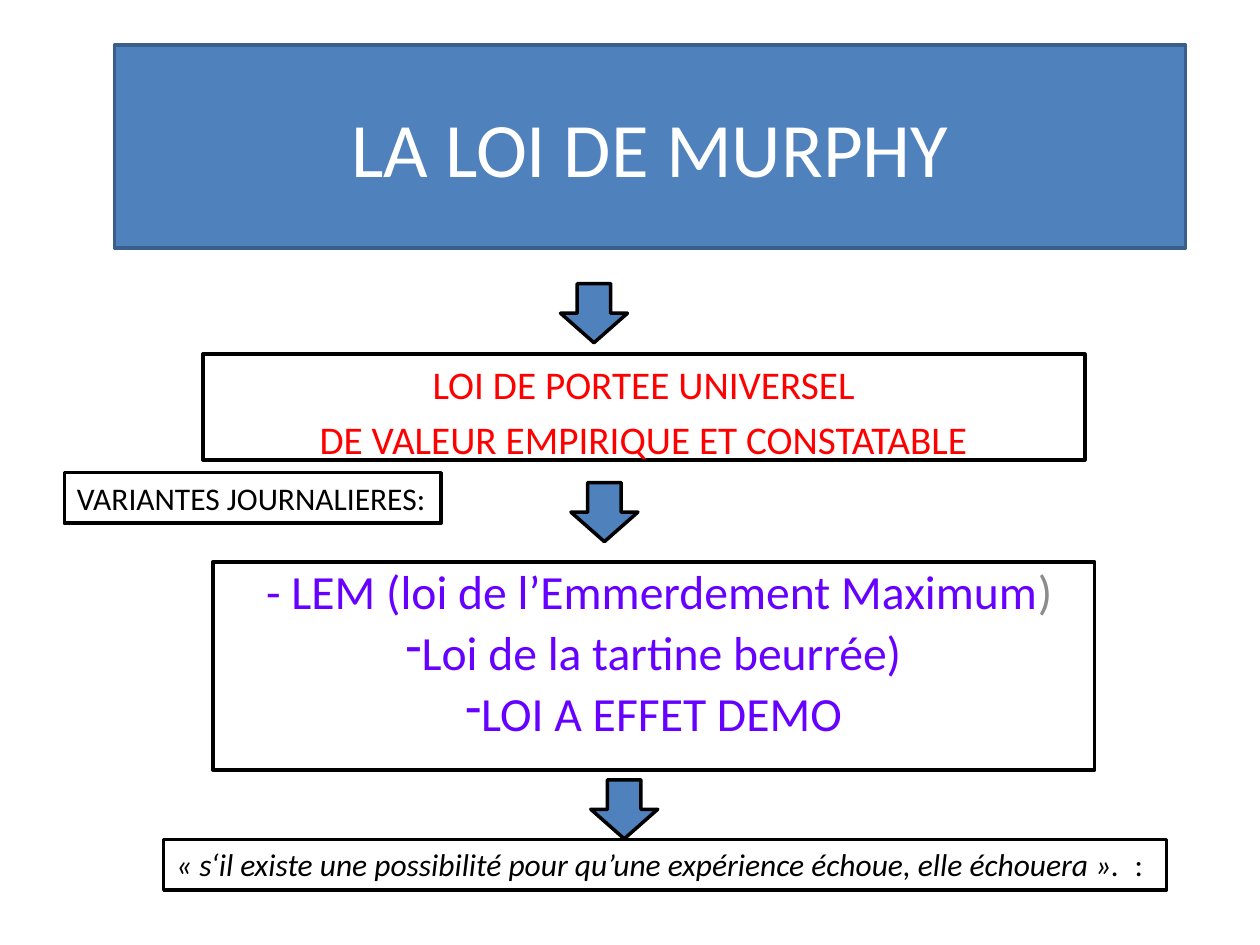
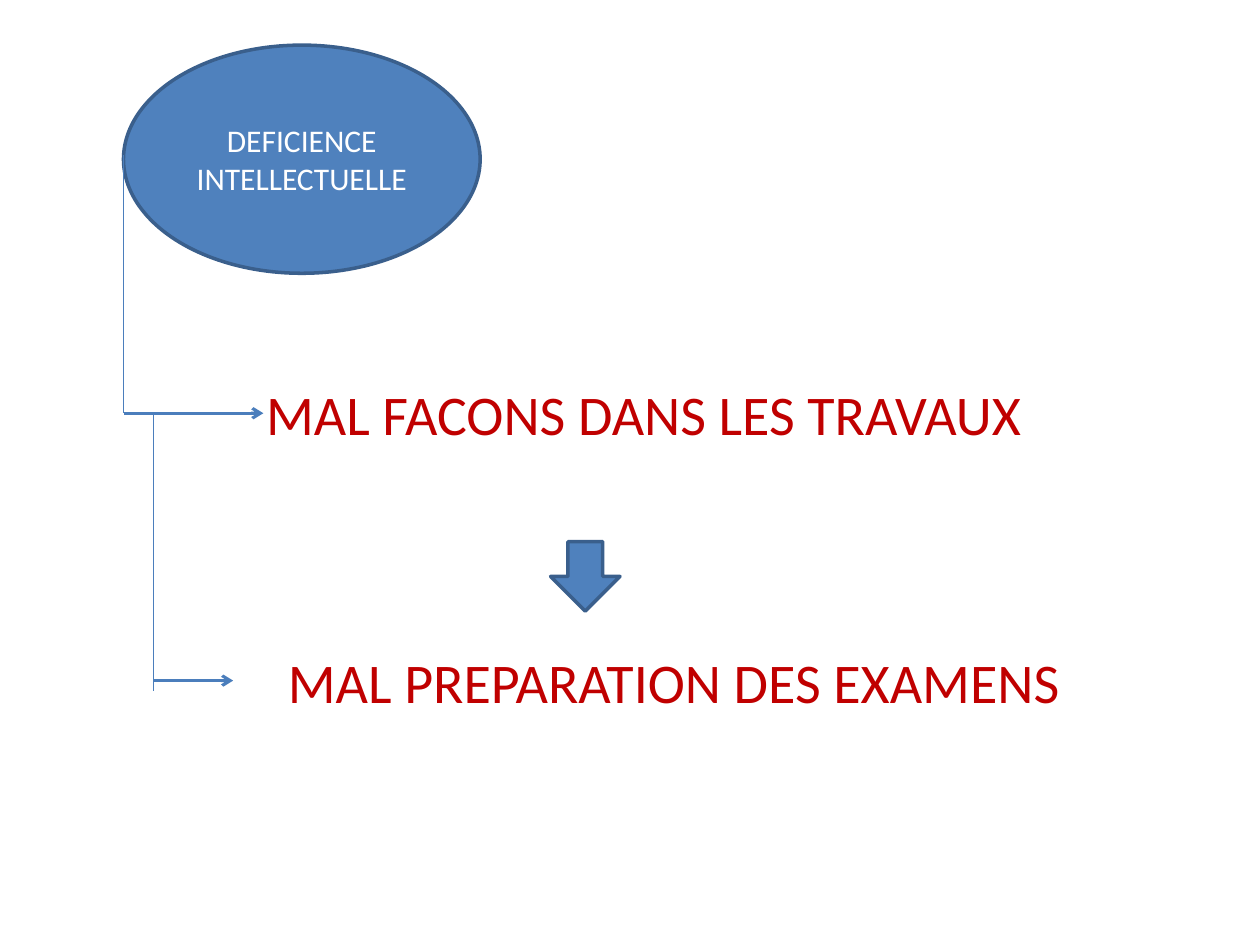
from dataclasses import dataclass

from lxml.etree import SubElement
from pptx import Presentation
from pptx.dml.color import RGBColor as Rgb
from pptx.enum.shapes import MSO_CONNECTOR as Connector, MSO_SHAPE as Preset
from pptx.enum.text import MSO_ANCHOR as Anchor, MSO_AUTO_SIZE as AutoSize, PP_ALIGN as Align
from pptx.oxml.ns import qn
from pptx.util import Cm, Pt


@dataclass(frozen=True)
class Theme:
    font: str = "Calibri"
    blue: Rgb = Rgb(0x4F, 0x81, 0xBD)
    blue_edge: Rgb = Rgb(0x3A, 0x5F, 0x8C)
    blue_link: Rgb = Rgb(0x4B, 0x7E, 0xBC)
    black: Rgb = Rgb(0, 0, 0)
    white: Rgb = Rgb(255, 255, 255)
    red: Rgb = Rgb(255, 0, 0)
    dark_red: Rgb = Rgb(0xC0, 0, 0)
    violet: Rgb = Rgb(0x66, 0, 255)
    grey: Rgb = Rgb(0x8C, 0x8C, 0x8C)
    title_size: float = 44
    law_size: float = 22.4
    variant_size: float = 27.2
    outcome_size: float = 32
    note_size: float = 18
    edge_width: float = 2
    paragraph_gap: float = 0.2


THEME = Theme()


@dataclass(frozen=True)
class Area:
    """A rectangle in centimetres."""
    left: float
    top: float
    width: float
    height: float

    def lengths(self) -> tuple:
        return Cm(self.left), Cm(self.top), Cm(self.width), Cm(self.height)


@dataclass(frozen=True)
class Style:
    size: float
    color: Rgb
    align: Align = Align.CENTER
    anchor: Anchor = Anchor.TOP
    gap: float = 0
    line_spacing: float | None = None


@dataclass(frozen=True)
class Link:
    """A straight line in centimetres."""
    start: tuple[float, float]
    end: tuple[float, float]
    arrow: bool = False


TITLE = Style(THEME.title_size, THEME.white, anchor=Anchor.MIDDLE)
LAW = Style(THEME.law_size, THEME.red, gap=THEME.paragraph_gap)
VARIANT = Style(THEME.variant_size, THEME.violet, gap=THEME.paragraph_gap, line_spacing=0.9)
NOTE = Style(THEME.note_size, THEME.black, align=Align.LEFT)
CAUSE = Style(THEME.note_size, THEME.white, anchor=Anchor.MIDDLE)
OUTCOME = Style(THEME.outcome_size, THEME.dark_red, gap=THEME.paragraph_gap)


def place(shape, area: Area) -> None:
    shape.left, shape.top, shape.width, shape.height = area.lengths()


def paint(shape, fill: Rgb, edge: Rgb) -> None:
    shape.fill.solid()
    shape.fill.fore_color.rgb = fill
    shape.line.color.rgb = edge
    shape.line.width = Pt(THEME.edge_width)


def write(shape, lines: list[str], style: Style, wrap: bool = True) -> list:
    """Fill the shape with one paragraph per line and return the paragraphs."""
    frame = shape.text_frame
    frame.text = "\n".join(lines)
    frame.word_wrap = wrap
    frame.auto_size = AutoSize.NONE if wrap else AutoSize.SHAPE_TO_FIT_TEXT
    frame.vertical_anchor = style.anchor
    for paragraph in frame.paragraphs:
        paragraph.alignment = style.align
        paragraph.space_before = Pt(style.size * style.gap)
        paragraph.line_spacing = style.line_spacing
        font = paragraph.font
        font.name, font.size = THEME.font, Pt(style.size)
        font.color.rgb = style.color
    return list(frame.paragraphs)


def add_dash(paragraph) -> None:
    """Give the paragraph a dash bullet that stands right before the text."""
    properties = paragraph._p.get_or_add_pPr()
    properties.set("marL", "0")
    properties.set("indent", "0")
    bullet = SubElement(properties, qn("a:buChar"))
    bullet.set("char", "-")
    defaults = properties.find(qn("a:defRPr"))
    if defaults is not None:
        defaults.addprevious(bullet)


def add_preset(slide, preset: Preset, area: Area, edge: Rgb = THEME.blue_edge):
    shape = slide.shapes.add_shape(preset, *area.lengths())
    shape.shadow.inherit = False
    paint(shape, THEME.blue, edge)
    return shape


def add_text(slide, area: Area, lines: list[str], style: Style,
             framed: bool = False, wrap: bool = True) -> list:
    box = slide.shapes.add_textbox(*area.lengths())
    if framed:
        paint(box, THEME.white, THEME.black)
    return write(box, lines, style, wrap)


def add_link(slide, link: Link) -> None:
    ends = (Cm(value) for value in (*link.start, *link.end))
    line = slide.shapes.add_connector(Connector.STRAIGHT, *ends)
    line.line.color.rgb = THEME.blue_link
    line.line.width = Pt(1.75 if link.arrow else 0.75)
    if link.arrow:
        SubElement(line.line._get_or_add_ln(), qn("a:tailEnd")).set("type", "arrow")
    SubElement(line._element.spPr, qn("a:effectLst"))


def build_murphy(slide) -> None:
    title, law = slide.shapes.title, slide.placeholders[1]
    place(title, Area(2.31, 0.91, 21.59, 4.09))
    paint(title, THEME.blue, THEME.blue_edge)
    write(title, ["LA LOI DE MURPHY"], TITLE)

    place(law, Area(4.09, 7.14, 17.78, 2.13))
    paint(law, THEME.white, THEME.black)
    write(law, ["LOI DE PORTEE UNIVERSEL", "DE VALEUR EMPIRIQUE ET CONSTATABLE"], LAW)

    for left, top in ((11.3, 5.72), (11.51, 9.73), (11.91, 15.72)):
        add_preset(slide, Preset.DOWN_ARROW, Area(left, top, 1.35, 1.19), THEME.black)

    maximum, *dashed = add_text(
        slide, Area(4.29, 11.33, 17.78, 4.19),
        [" - LEM (loi de l’Emmerdement Maximum", "Loi de la tartine beurrée)", "LOI A EFFET DEMO"],
        VARIANT, framed=True)
    closing = maximum.add_run()
    closing.text = ")"
    closing.font.color.rgb = THEME.grey
    for variant in dashed:
        add_dash(variant)

    add_text(slide, Area(1.3, 9.53, 7.59, 1.02), ["VARIANTES JOURNALIERES:"], NOTE,
             framed=True, wrap=False)
    quote, = add_text(
        slide, Area(3.3, 16.92, 20.22, 1.02),
        ["« s‘il existe une possibilité pour qu’une expérience échoue, elle échouera ».  "],
        NOTE, framed=True, wrap=False)
    quote.runs[0].font.italic = True
    quote.add_run().text = ":"


def build_deficiency(slide) -> None:
    title, workmanship = slide.shapes.title, slide.placeholders[1]
    title._element.getparent().remove(title._element)
    place(workmanship, Area(4.09, 7.52, 17.78, 1.73))
    write(workmanship, ["MAL FACONS DANS LES TRAVAUX"], OUTCOME)

    cause = add_preset(slide, Preset.OVAL, Area(2.49, 0.91, 7.19, 4.6))
    write(cause, ["DEFICIENCE INTELLECTUELLE"], CAUSE)
    add_preset(slide, Preset.DOWN_ARROW, Area(11.1, 10.92, 1.4, 1.4))
    add_text(slide, Area(4.7, 12.93, 17.78, 1.73), ["MAL PREPARATION DES EXAMENS"], OUTCOME)

    for link in (
        Link((2.49, 3.12), (2.49, 8.33)),
        Link((2.49, 8.33), (5.31, 8.33), arrow=True),
        Link((3.1, 8.33), (3.1, 13.92)),
        Link((3.1, 13.72), (4.7, 13.72), arrow=True),
    ):
        add_link(slide, link)


def main() -> None:
    deck = Presentation()
    deck.slide_width, deck.slide_height = Cm(25.4), Cm(19.05)
    for build in (build_murphy, build_deficiency):
        build(deck.slides.add_slide(deck.slide_layouts[0]))
    deck.save("out.pptx")


if __name__ == "__main__":
    main()
